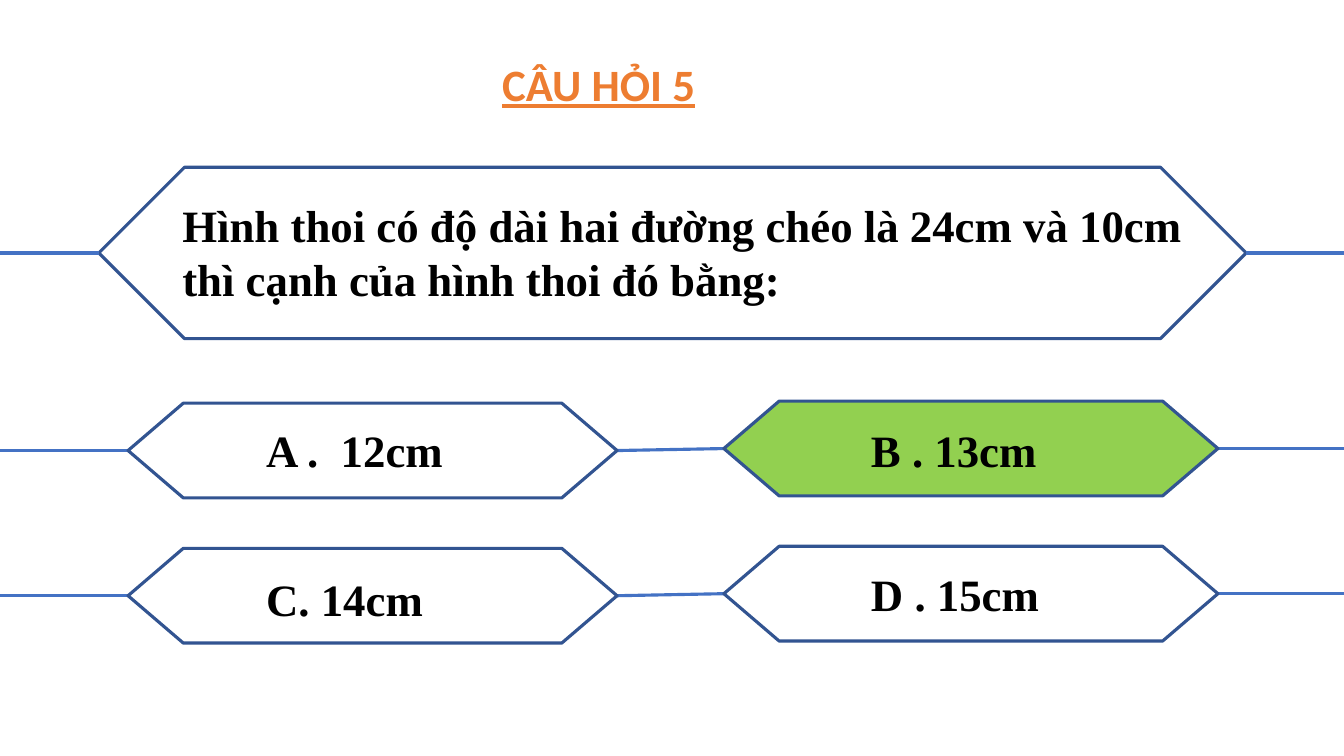
from pptx import Presentation
from pptx.dml.color import RGBColor
from pptx.enum.shapes import MSO_CONNECTOR, MSO_SHAPE
from pptx.enum.text import MSO_ANCHOR, PP_ALIGN
from pptx.oxml.ns import qn
from pptx.util import Inches, Pt
from lxml.etree import SubElement

ORANGE = RGBColor(0xED, 0x7D, 0x31)
BLACK = RGBColor(0x00, 0x00, 0x00)
GREEN = RGBColor(0x92, 0xD0, 0x50)
OUTLINE_BLUE = RGBColor(0x32, 0x54, 0x91)
LINE_BLUE = RGBColor(0x44, 0x72, 0xC4)

SLIDE_W, SLIDE_H = 13.33, 7.5
LINE_WIDTH = Pt(2.25)
ROW_TOP, ROW_PITCH, ANSWER_H = 4.0, 1.44, 0.94
RIGHT_RAISE = 0.02  # the right-hand answers sit slightly higher

HEADING_FONT = {"name": "Calibri", "size": Pt(32), "bold": True, "underline": True}
BODY_FONT = {"name": "Times New Roman", "size": Pt(32), "bold": True}


def write(frame, text, font_format, color):
    frame.word_wrap = True
    frame.vertical_anchor = MSO_ANCHOR.TOP
    paragraph = frame.paragraphs[0]
    paragraph.alignment = PP_ALIGN.LEFT
    run = paragraph.add_run()
    run.text = text
    for attribute, value in font_format.items():
        setattr(run.font, attribute, value)
    run.font.color.rgb = color


def add_label(slide, box, text):
    label = slide.shapes.add_textbox(*map(Inches, box))
    write(label.text_frame, text, BODY_FONT, BLACK)


def add_hexagon(slide, box, slant, fill=None):
    hexagon = slide.shapes.add_shape(MSO_SHAPE.HEXAGON, *map(Inches, box))
    hexagon.adjustments[0] = slant
    hexagon.shadow.inherit = False
    if fill is None:
        hexagon.fill.background()
    else:
        hexagon.fill.solid()
        hexagon.fill.fore_color.rgb = fill
    hexagon.line.color.rgb = OUTLINE_BLUE
    hexagon.line.width = LINE_WIDTH


def add_line(slide, start, end):
    line = slide.shapes.add_connector(
        MSO_CONNECTOR.STRAIGHT, *map(Inches, (*start, *end)))
    line.line.color.rgb = LINE_BLUE
    line.line.width = LINE_WIDTH
    SubElement(line._element.spPr, qn("a:effectLst"))


def add_heading(slide, box, text):
    heading = slide.shapes.title
    heading.left, heading.top, heading.width, heading.height = map(Inches, box)
    write(heading.text_frame, text, HEADING_FONT, ORANGE)


def add_question(slide, box, text):
    left, top, width, height = box
    middle = top + height / 2
    add_label(slide, (left + 0.73, top + 0.25, width - 0.94, 1.18), text)
    add_hexagon(slide, box, 0.5)
    # Lines out to both slide edges
    add_line(slide, (0, middle), (left, middle))
    add_line(slide, (left + width, middle), (SLIDE_W, middle))


def add_answer_row(slide, top, answers):
    """Place two answers, each (text, text drop, fill), joined by lines."""
    boxes = [(1.27, top, 4.85, ANSWER_H),
             (7.18, top - RIGHT_RAISE, 4.9, ANSWER_H)]
    # Lines run from slide edge to slide edge through the gaps
    (left_x, left_y), (right_x, right_y) = [
        (box[0], box[1] + ANSWER_H / 2) for box in boxes]
    left_end, right_end = [box[0] + box[2] for box in boxes]
    add_line(slide, (0, left_y), (left_x, left_y))
    add_line(slide, (left_end, left_y), (right_x, right_y))
    add_line(slide, (right_end, right_y), (SLIDE_W, right_y))
    # Hexagons with their answers
    for box, (text, drop, fill) in zip(boxes, answers):
        add_hexagon(slide, box, 0.583, fill)
        indent = 1.27 if box is boxes[0] else 1.36
        add_label(slide, (box[0] + indent, top + drop, box[2] - indent, 0.64), text)


def main():
    presentation = Presentation()
    presentation.slide_width = Inches(SLIDE_W)
    presentation.slide_height = Inches(SLIDE_H)
    slide = presentation.slides.add_slide(presentation.slide_layouts[5])

    add_heading(slide, (4.88, 0.51, 3.36, 0.59), "CÂU HỎI 5")
    add_question(slide, (0.98, 1.66, 11.38, 1.7),
                 "Hình thoi có độ dài hai đường chéo là 24cm và 10cm "
                 "thì cạnh của hình thoi đó bằng:")
    rows = [
        [("A .  12cm", 0.14, None), ("B . 13cm", 0.14, GREEN)],
        [("C. 14cm", 0.18, None), ("D . 15cm", 0.13, None)],
    ]
    for index, answers in enumerate(rows):
        add_answer_row(slide, ROW_TOP + index * ROW_PITCH, answers)

    presentation.save("out.pptx")


if __name__ == "__main__":
    main()
